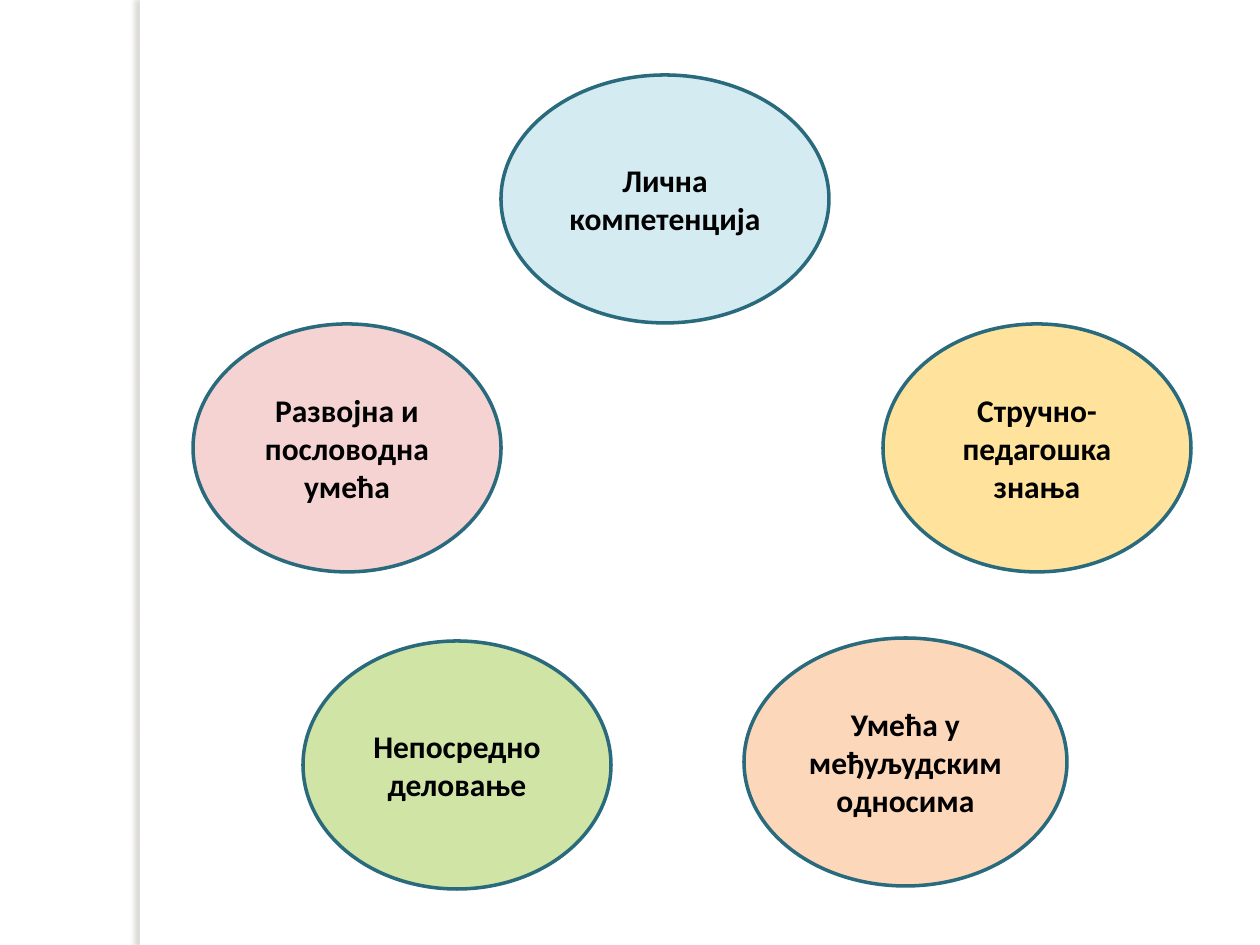
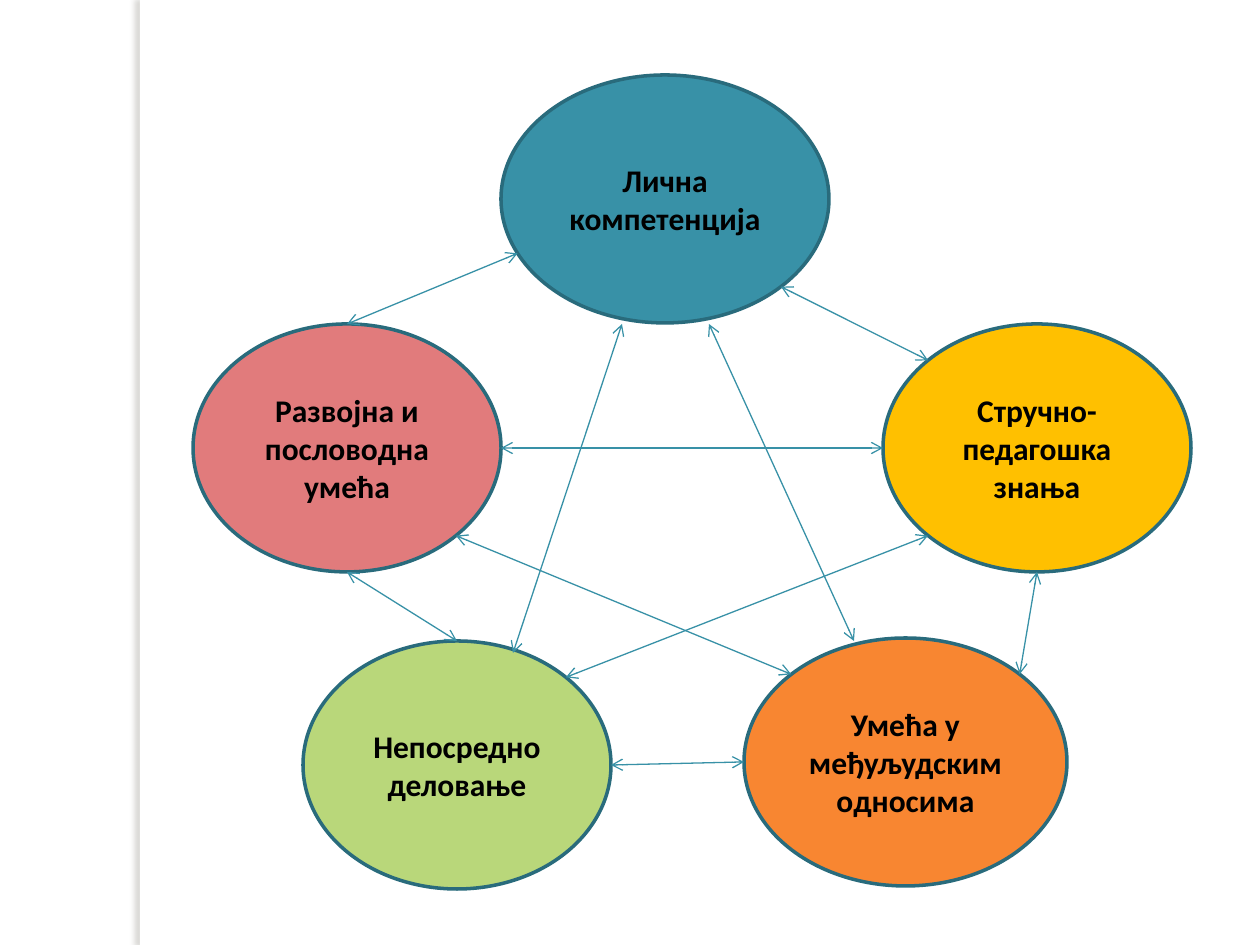
from dataclasses import dataclass
from math import cos, radians, sin

from lxml.etree import SubElement
from pptx import Presentation
from pptx.dml.color import RGBColor
from pptx.enum.shapes import MSO_CONNECTOR as CONNECTOR, MSO_SHAPE as SHAPE
from pptx.enum.text import MSO_ANCHOR as ANCHOR, PP_ALIGN as ALIGN
from pptx.oxml.ns import qn
from pptx.util import Emu, Pt

SLIDE_SIZE = (1260, 945)
PX_PER_INCH = 126
EDGE_BAND = (140, 0, 10, 945)

COMPETENCES = {
    "personal": ("Лична компетенција", (501, 75, 328, 248)),
    "development": ("Развојна и пословодна умећа", (193, 324, 308, 248)),
    "pedagogy": ("Стручно-педагошка знања", (883, 324, 308, 248)),
    "practice": ("Непосредно деловање", (303, 641, 308, 248)),
    "relations": ("Умећа у међуљудским односима", (744, 638, 323, 248)),
}

# Each end is a competence with a clockwise angle, or a fixed point.
LINKS = [
    (("personal", 45), ("pedagogy", 225)),
    (("pedagogy", 90), ("relations", 315)),
    (("relations", 180), ("practice", 0)),
    (("practice", 270), ("development", 90)),
    (("development", 270), ("personal", 154)),
    ((709, 324), (854, 641)),
    ((622, 324), (513, 653)),
    (("development", 0), ("pedagogy", 180)),
    (("development", 45), ("relations", 225)),
    (("practice", 315), ("pedagogy", 135)),
]


@dataclass(frozen=True)
class Theme:
    font: str = "Calibri"
    label_size: int = 18
    label: str = "000000"
    paper: str = "FFFFFF"
    outline: str = "296B7C"
    outline_width: float = 2
    link: str = "3891A7"
    link_width: float = 0.75
    band_shadow: str = "736F63"
    pale: tuple = ("D4EBF1", "F5D3D3", "FFE39D", "D0E4A6", "FDD7BA")
    vivid: tuple = ("3891A7", "E17B7C", "FFC000", "B9D77A", "F88631")


THEME = Theme()


def px(length):
    return Emu(round(length * 914400 / PX_PER_INCH))


def rgb(colour):
    return RGBColor.from_string(colour)


def write(frame, text, *, size=THEME.label_size, colour=THEME.label, bold=True):
    frame.word_wrap = True
    frame.vertical_anchor = ANCHOR.MIDDLE
    paragraph = frame.paragraphs[0]
    paragraph.alignment = ALIGN.CENTER
    run = paragraph.add_run()
    run.text = text
    run.font.name = THEME.font
    run.font.size = Pt(size)
    run.font.bold = bold
    run.font.color.rgb = rgb(colour)


def add_filled(slide, kind, box, fill):
    filled = slide.shapes.add_shape(kind, *map(px, box))
    filled.shadow.inherit = False
    filled.fill.solid()
    filled.fill.fore_color.rgb = rgb(fill)
    return filled


def put_band_on_layout(slide):
    band = add_filled(slide, SHAPE.RECTANGLE, EDGE_BAND, THEME.paper)
    band.line.fill.background()
    effects = band.element.spPr.find(qn("a:effectLst"))
    shadow = SubElement(effects, qn("a:outerShdw"), blurRad=str(Pt(3)),
                        dist=str(Pt(3)), dir="10800000", rotWithShape="0")
    tint = SubElement(shadow, qn("a:srgbClr"), val=THEME.band_shadow)
    SubElement(tint, qn("a:alpha"), val="25000")
    band.element.nvSpPr.cNvPr.set("id", "20")
    slide.slide_layout.element.cSld.spTree.append(band.element)


def add_competences(slide, fills):
    for (label, box), fill in zip(COMPETENCES.values(), fills):
        oval = add_filled(slide, SHAPE.OVAL, box, fill)
        oval.line.color.rgb = rgb(THEME.outline)
        oval.line.width = Pt(THEME.outline_width)
        write(oval.text_frame, label)


def locate(end):
    place, angle = end
    if place not in COMPETENCES:
        return end
    left, top, width, height = COMPETENCES[place][1]
    turn = radians(angle)
    return (left + width / 2 * (1 + cos(turn)),
            top + height / 2 * (1 + sin(turn)))


def add_link(slide, start, finish):
    points = (*locate(start), *locate(finish))
    link = slide.shapes.add_connector(CONNECTOR.STRAIGHT, *map(px, points))
    link.line.color.rgb = rgb(THEME.link)
    link.line.width = Pt(THEME.link_width)
    properties = link.element.spPr
    for tip in ("a:headEnd", "a:tailEnd"):
        SubElement(properties.find(qn("a:ln")), qn(tip), type="arrow")
    SubElement(properties, qn("a:effectLst"))


def main():
    deck = Presentation()
    deck.slide_width, deck.slide_height = map(px, SLIDE_SIZE)
    blank = deck.slide_layouts[6]

    overview = deck.slides.add_slide(blank)
    put_band_on_layout(overview)
    add_competences(overview, THEME.pale)

    network = deck.slides.add_slide(blank)
    add_competences(network, THEME.vivid)
    for start, finish in LINKS:
        add_link(network, start, finish)

    deck.save("out.pptx")


if __name__ == "__main__":
    main()
